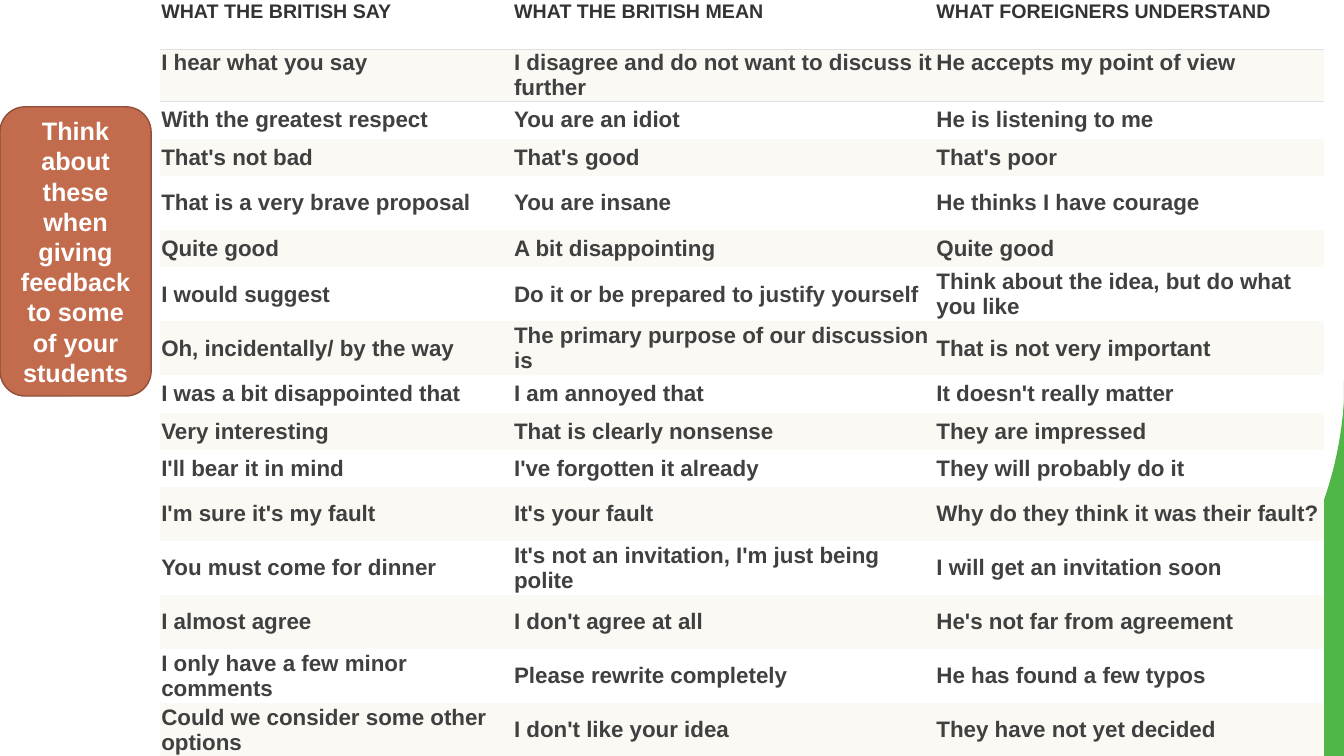
from lxml.etree import SubElement
from pptx import Presentation
from pptx.dml.color import RGBColor
from pptx.enum.shapes import MSO_SHAPE
from pptx.enum.text import MSO_ANCHOR, PP_ALIGN
from pptx.oxml.ns import qn
from pptx.util import Pt

COLORS = {
    "white": "FFFFFF", "cream": "FBF9F3", "rule": "E0E0E0",
    "heading": "333333", "body": "404040",
    "clay": "C36B4D", "clay_edge": "904F39", "green": "50B648",
}
NO_STYLE_NO_GRID = "{2D5ABB26-0587-4C30-8999-92F81FD0307C}"
SHORT, TALL = 26.6, 38.6
COLUMN_WIDTHS = [252, 301.7, 277.2]
ROW_HEIGHTS = [35.3, 36.8, 27, SHORT, TALL, SHORT, TALL, TALL, SHORT, SHORT,
               SHORT, TALL, TALL, TALL, TALL, TALL]
PHRASES = [
    ("WHAT THE BRITISH SAY", "WHAT THE BRITISH MEAN", "WHAT FOREIGNERS UNDERSTAND"),
    ("I hear what you say", "I disagree and do not want to discuss it further",
     "He accepts my point of view"),
    ("With the greatest respect", "You are an idiot", "He is listening to me"),
    ("That's not bad", "That's good", "That's poor"),
    ("That is a very brave proposal", "You are insane", "He thinks I have courage"),
    ("Quite good", "A bit disappointing", "Quite good"),
    ("I would suggest", "Do it or be prepared to justify yourself",
     "Think about the idea, but do what you like"),
    ("Oh, incidentally/ by the way", "The primary purpose of our discussion is",
     "That is not very important"),
    ("I was a bit disappointed that", "I am annoyed that", "It doesn't really matter"),
    ("Very interesting", "That is clearly nonsense", "They are impressed"),
    ("I'll bear it in mind", "I've forgotten it already", "They will probably do it"),
    ("I'm sure it's my fault", "It's your fault", "Why do they think it was their fault?"),
    ("You must come for dinner", "It's not an invitation, I'm just being polite",
     "I will get an invitation soon"),
    ("I almost agree", "I don't agree at all", "He's not far from agreement"),
    ("I only have a few minor comments", "Please rewrite completely",
     "He has found a few typos"),
    ("Could we consider some other options", "I don't like your idea",
     "They have not yet decided"),
]


def color(name):
    """Return the named colour as an RGBColor."""
    return RGBColor.from_string(COLORS[name])


def write_text(frame, text, size, color_name, align=PP_ALIGN.LEFT):
    """Put bold Arial text into a text frame."""
    paragraph = frame.paragraphs[0]
    paragraph.alignment = align
    run = paragraph.add_run()
    run.text = text
    run.font.name = "Arial"
    run.font.size = Pt(size)
    run.font.bold = True
    run.font.color.rgb = color(color_name)


def add_border(cell, side):
    """Draw a thin rule on one side of a cell, before its fill is set."""
    line = SubElement(cell._tc.get_or_add_tcPr(), qn(f"a:{side}"), w=str(Pt(0.75)))
    fill = SubElement(line, qn("a:solidFill"))
    SubElement(fill, qn("a:srgbClr"), val=COLORS["rule"])


def curve_points(start, first, second, end, steps=40):
    """Return points along a cubic curve, leaving out its start."""
    points = []
    for step in range(1, steps + 1):
        t = step / steps
        weights = ((1 - t) ** 3, 3 * t * (1 - t) ** 2, 3 * t * t * (1 - t), t ** 3)
        points.append(tuple(
            Pt(sum(weight * value for weight, value in zip(weights, values)))
            for values in zip(start, first, second, end)))
    return points


def add_green_corner(slide, left, top, width, height):
    """Fill the lower right corner outside a concave curve."""
    right, bottom = left + width, top + height
    start = (left + 0.02 * width, bottom)
    builder = slide.shapes.build_freeform(Pt(right), Pt(top))
    builder.add_line_segments([(Pt(right), Pt(bottom)), (Pt(left), Pt(bottom))], close=False)
    builder.add_line_segments(curve_points(
        start,
        (left + 0.55 * width, top + 0.97 * height),
        (left + 0.97 * width, top + 0.56 * height),
        (right, top + 0.05 * height)), close=True)
    shape = builder.convert_to_shape()
    shape.shadow.inherit = False
    shape.fill.solid()
    shape.fill.fore_color.rgb = color("green")
    shape.line.fill.background()


def add_phrase_table(slide, left, top):
    """Add the table of phrases, meanings and misunderstandings."""
    frame = slide.shapes.add_table(
        len(PHRASES), len(COLUMN_WIDTHS), Pt(left), Pt(top),
        Pt(sum(COLUMN_WIDTHS)), Pt(sum(ROW_HEIGHTS)))
    table = frame.table
    table.first_row = table.horz_banding = False
    table._tbl.tblPr.find(qn("a:tableStyleId")).text = NO_STYLE_NO_GRID
    for column, width in zip(table.columns, COLUMN_WIDTHS):
        column.width = Pt(width)
    for index, (row, height) in enumerate(zip(table.rows, ROW_HEIGHTS)):
        row.height = Pt(height)
        for cell, text in zip(row.cells, PHRASES[index]):
            cell.margin_left = cell.margin_right = Pt(0.72)
            cell.margin_top = cell.margin_bottom = Pt(0.72)
            cell.vertical_anchor = MSO_ANCHOR.TOP if index < 2 else MSO_ANCHOR.MIDDLE
            if index < 2:
                add_border(cell, ("lnB", "lnT")[index])
            cell.fill.solid()
            cell.fill.fore_color.rgb = color("cream" if index % 2 else "white")
            size, color_name = (16, "body") if index else (14, "heading")
            write_text(cell.text_frame, text, size, color_name)


def add_advice(slide, left, top, width, height):
    """Add the rounded box of advice beside the table."""
    shape = slide.shapes.add_shape(
        MSO_SHAPE.ROUNDED_RECTANGLE, Pt(left), Pt(top), Pt(width), Pt(height))
    shape.shadow.inherit = False
    shape.fill.solid()
    shape.fill.fore_color.rgb = color("clay")
    shape.line.color.rgb = color("clay_edge")
    shape.line.width = Pt(1)
    shape.text_frame.word_wrap = True
    shape.text_frame.vertical_anchor = MSO_ANCHOR.MIDDLE
    write_text(shape.text_frame,
               "Think about these when giving feedback to some of your students",
               18, "white", PP_ALIGN.CENTER)


def main():
    """Build the slide and save the presentation."""
    presentation = Presentation()
    presentation.slide_width, presentation.slide_height = Pt(960), Pt(540)
    slide = presentation.slides.add_slide(presentation.slide_layouts[6])
    add_green_corner(slide, 693.4, 272.2, 266.6, 267.8)
    add_phrase_table(slide, 114.5, 0)
    add_advice(slide, 0, 76.3, 108, 206.6)
    presentation.save("out.pptx")


if __name__ == "__main__":
    main()
